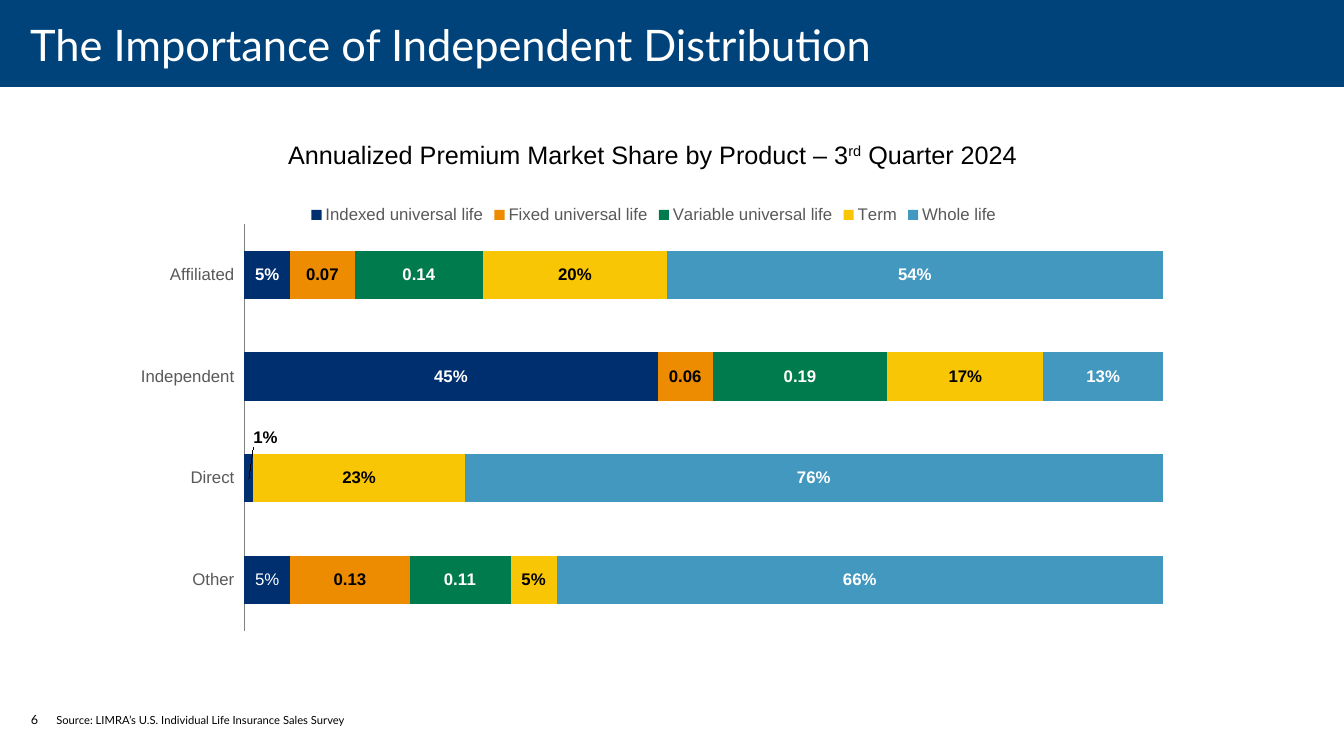
from dataclasses import dataclass
from typing import Optional

from lxml import etree
from pptx import Presentation
from pptx.chart.data import CategoryChartData
from pptx.dml.color import RGBColor
from pptx.enum.chart import XL_CHART_TYPE, XL_LEGEND_POSITION, XL_TICK_LABEL_POSITION, XL_TICK_MARK
from pptx.enum.shapes import MSO_SHAPE
from pptx.enum.text import MSO_ANCHOR, MSO_AUTO_SIZE, PP_ALIGN
from pptx.oxml import parse_xml
from pptx.oxml.ns import nsdecls, qn
from pptx.util import Pt

BAR_CHART = XL_CHART_TYPE.BAR_STACKED_100
LEGEND_TOP = XL_LEGEND_POSITION.TOP
NO_TICK = XL_TICK_MARK.NONE
LABELS_LOW = XL_TICK_LABEL_POSITION.LOW
RECTANGLE = MSO_SHAPE.RECTANGLE
TOP, MIDDLE, BOTTOM = MSO_ANCHOR.TOP, MSO_ANCHOR.MIDDLE, MSO_ANCHOR.BOTTOM
NO_AUTOFIT = MSO_AUTO_SIZE.NONE
LEFT = PP_ALIGN.LEFT


@dataclass(frozen=True)
class Theme:
    banner: str = "00437B"
    white: str = "FFFFFF"
    black: str = "000000"
    grey: str = "595959"
    axis: str = "808080"
    heading_font: str = "Lato"
    chart_font: str = "Arial"
    title_size: float = 31
    subtitle_size: float = 18
    chart_size: float = 12
    number_size: float = 9
    source_size: float = 8


THEME = Theme()


@dataclass(frozen=True)
class Box:
    left: float
    top: float
    width: float
    height: float


@dataclass(frozen=True)
class Span:
    text: str
    baseline: int = 0


@dataclass(frozen=True)
class Product:
    name: str
    shares: tuple[Optional[float], ...]
    color: str
    label_color: str
    label_format: str = "0%"


@dataclass(frozen=True)
class LabelException:
    point: int
    color: str
    bold: bool
    shift: Optional[tuple[float, float]] = None


CHANNELS = ("Other", "Direct", "Independent", "Affiliated")
PRODUCTS = (
    Product("Indexed universal life", (0.05, 0.01, 0.45, 0.05), "002F70", THEME.white),
    Product("Fixed universal life", (0.13, None, 0.06, 0.07), "ED8C00", THEME.black, "General"),
    Product("Variable universal life", (0.11, None, 0.19, 0.14), "007B4E", THEME.white, "General"),
    Product("Term", (0.05, 0.23, 0.17, 0.2), "F9C606", THEME.black),
    Product("Whole life", (0.66, 0.76, 0.13, 0.54), "4298BE", THEME.white),
)
INDEXED_EXCEPTIONS = (
    LabelException(0, THEME.white, False),
    LabelException(1, THEME.black, True, (0.016, -0.09)),
)


def style_font(font, name: str, size: float, color: str, bold: bool = False) -> None:
    font.name, font.size, font.bold = name, Pt(size), bold
    font.color.rgb = RGBColor.from_string(color)


def place(shape, box: Box) -> None:
    shape.left, shape.top = Pt(box.left), Pt(box.top)
    shape.width, shape.height = Pt(box.width), Pt(box.height)


def write(shape, spans: tuple[Span, ...], font: str, size: float, color: str,
          anchor=TOP, wrap: bool = True) -> None:
    frame = shape.text_frame
    frame.auto_size, frame.word_wrap = NO_AUTOFIT, wrap
    frame.vertical_anchor = anchor
    para = frame.paragraphs[0]
    para.alignment, para.space_before = LEFT, Pt(0)
    for span in spans:
        run = para.add_run()
        run.text = span.text
        style_font(run.font, font, size, color)
        if span.baseline:
            run._r.get_or_add_rPr().set("baseline", str(span.baseline * 1000))


def add_text(slide, box: Box, spans: tuple[Span, ...], font: str, size: float) -> None:
    shape = slide.shapes.add_textbox(0, 0, 0, 0)
    place(shape, box)
    write(shape, spans, font, size, THEME.black)


def manual_layout(**parts):
    children = "".join(f'<c:{tag} val="{value}"/>' for tag, value in parts.items())
    return parse_xml(f'<c:layout {nsdecls("c")}><c:manualLayout>{children}'
                     '</c:manualLayout></c:layout>')


def adjust_label(series, exception: LabelException) -> None:
    label = series.points[exception.point].data_label
    style_font(label.font, THEME.chart_font, THEME.chart_size, exception.color, exception.bold)
    element = label._get_or_add_dLbl()
    number_format = etree.Element(qn("c:numFmt"), formatCode="0%", sourceLinked="0")
    element.insert(1, number_format)
    if exception.shift:
        element.insert(1, manual_layout(x=exception.shift[0], y=exception.shift[1]))


def add_share_chart(slide, box: Box) -> None:
    data = CategoryChartData()
    data.categories = CHANNELS
    for product in PRODUCTS:
        data.add_series(product.name, product.shares)
    chart = slide.shapes.add_chart(BAR_CHART, Pt(box.left), Pt(box.top),
                                   Pt(box.width), Pt(box.height), data).chart
    style_font(chart.font, THEME.chart_font, THEME.chart_size, THEME.black)
    chart.has_title = False

    # Legend
    chart.has_legend = True
    chart.legend.position, chart.legend.include_in_layout = LEGEND_TOP, False
    style_font(chart.legend.font, THEME.chart_font, THEME.chart_size, THEME.grey)

    # Axes
    channels, shares = chart.category_axis, chart.value_axis
    channels.major_tick_mark = channels.minor_tick_mark = NO_TICK
    channels.tick_label_position = LABELS_LOW
    channels.has_major_gridlines = False
    channels.format.line.color.rgb = RGBColor.from_string(THEME.axis)
    channels.format.line.width = Pt(0.75)
    style_font(channels.tick_labels.font, THEME.chart_font, THEME.chart_size, THEME.grey)
    shares.has_major_gridlines = False
    shares.minimum_scale, shares.maximum_scale = 0, 1
    shares.tick_labels.number_format = "0%"
    shares.tick_labels.number_format_is_linked = False
    shares.visible = False

    # Bars and their labels
    plot = chart.plots[0]
    plot.gap_width, plot.overlap, plot.vary_by_categories = 110, 100, False
    for series, product in zip(plot.series, PRODUCTS):
        series.format.fill.solid()
        series.format.fill.fore_color.rgb = RGBColor.from_string(product.color)
        labels = series.data_labels
        labels.show_value = True
        labels.number_format = product.label_format
        labels.number_format_is_linked = False
        style_font(labels.font, THEME.chart_font, THEME.chart_size, product.label_color, True)
    for exception in INDEXED_EXCEPTIONS:
        adjust_label(plot.series[0], exception)

    # Plot area
    area = chart._chartSpace.chart.plotArea
    for old in area.findall(qn("c:layout")):
        area.remove(old)
    area.insert(0, manual_layout(layoutTarget="inner", xMode="edge", yMode="edge",
                                 x=0.106, y=0.066, w=0.884, h=0.915))


def main() -> None:
    deck = Presentation()
    deck.slide_width, deck.slide_height = Pt(960), Pt(540)
    page = deck.slides.add_slide(deck.slide_layouts[1])
    title, source = page.shapes.title, page.placeholders[1]

    # Banner behind the title
    banner = page.shapes.add_shape(RECTANGLE, 0, 0, Pt(960), Pt(62))
    banner.shadow.inherit = False
    banner.fill.solid()
    banner.fill.fore_color.rgb = RGBColor.from_string(THEME.banner)
    banner.line.fill.background()
    page.shapes._spTree.insert(2, banner._element)

    # Title
    place(title, Box(0, -3.6, 960, 70))
    frame = title.text_frame
    frame.margin_left, frame.margin_right = Pt(21.6), Pt(14.4)
    frame.margin_top = frame.margin_bottom = 0
    write(title, (Span("The Importance of Independent Distribution"),),
          THEME.heading_font, THEME.title_size, THEME.white, MIDDLE, False)

    # Chart and its heading
    add_share_chart(page, Box(95.8, 139, 742.3, 317.5))
    add_text(page, Box(198.7, 95.8, 578, 29),
             (Span("Annualized Premium Market Share by Product – 3"), Span("rd", 30),
              Span(" Quarter 2024")), THEME.chart_font, THEME.subtitle_size)

    # Source line and page number
    place(source, Box(33, 471, 421, 52))
    properties = source.text_frame.paragraphs[0]._p.get_or_add_pPr()
    properties.set("marL", "0")
    properties.set("indent", "0")
    etree.SubElement(properties, qn("a:buNone"))
    write(source, (Span("Source: LIMRA’s U.S. Individual Life Insurance Sales Survey"),),
          THEME.heading_font, THEME.source_size, THEME.black, BOTTOM)
    add_text(page, Box(15, 504.7, 35, 29), (Span("6"),), THEME.heading_font, THEME.number_size)

    deck.save("out.pptx")


if __name__ == "__main__":
    main()
